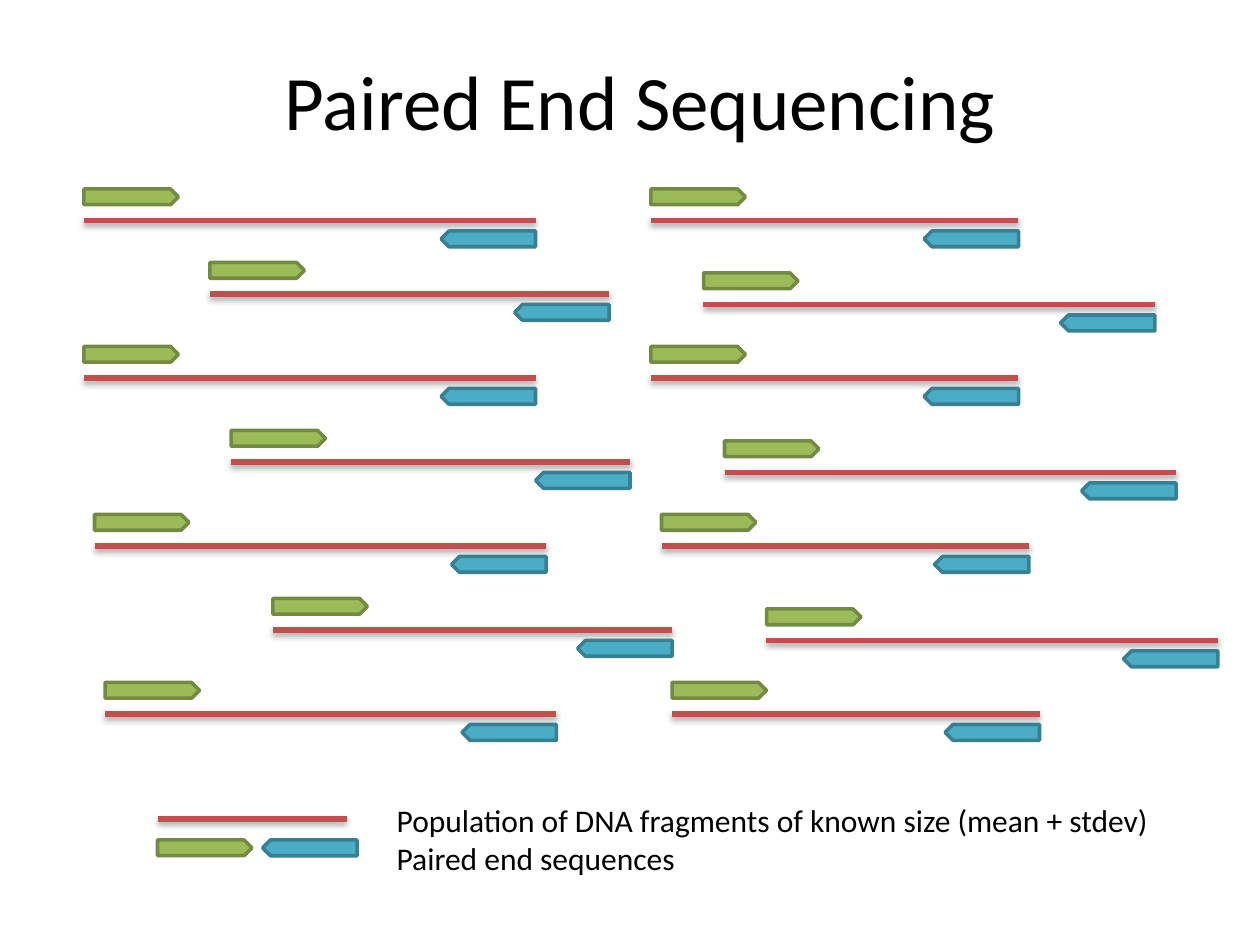
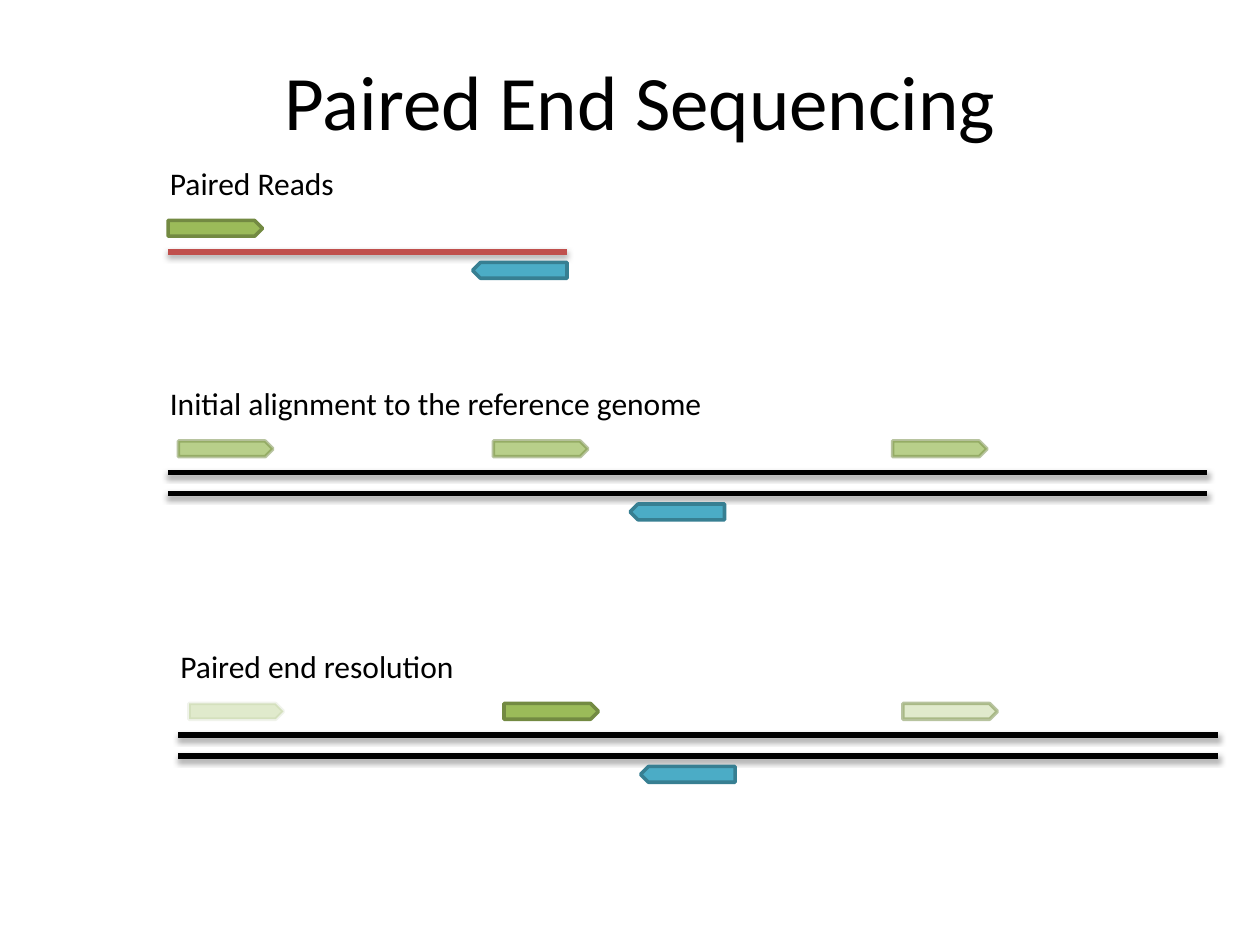
from lxml import etree
from pptx import Presentation
from pptx import util as u
from pptx.dml.color import RGBColor
from pptx.enum import shapes, text
from pptx.oxml import parse_xml
from pptx.oxml.ns import nsdecls, qn

RED, BLACK, WHITE = "C0504D", "000000", "FFFFFF"
FORWARD = {"fill": "9BBB59", "edge": "738A42", "rotation": 0}
REVERSE = {"fill": "4BACC6", "edge": "377F92", "rotation": 180}
SHADOW = (
    f'<a:effectLst {nsdecls("a")}>'
    '<a:outerShdw blurRad="40000" dist="23000" dir="5400000" rotWithShape="0">'
    '<a:srgbClr val="000000"><a:alpha val="35000"/></a:srgbClr>'
    "</a:outerShdw></a:effectLst>"
)
READ_COLUMNS, READ_ROWS = 9, 1.5
SOLID = (100, 100)

deck = Presentation()
deck.slide_width, deck.slide_height = u.Inches(10), u.Inches(7.5)
CELL = deck.slide_width / 120


def grid(*cells):
    return [u.Emu(round(cell * CELL)) for cell in cells]


def paint(fill, colour):
    fill.solid()
    fill.fore_color.rgb = RGBColor.from_string(colour)


title = {
    "lines": ["Paired End Sequencing"],
    "place": (7, 2, 108, 15),
    "size": 44,
    "frame": {"word_wrap": True, "vertical_anchor": text.MSO_ANCHOR.MIDDLE},
    "align": text.PP_ALIGN.CENTER,
}
label = {
    "size": 18,
    "frame": {"word_wrap": False, "auto_size": text.MSO_AUTO_SIZE.SHAPE_TO_FIT_TEXT},
    "align": text.PP_ALIGN.LEFT,
}

population = [
    (8, 21, 43), (62, 21, 35),
    (20, 28, 38), (67, 29, 43),
    (8, 36, 43), (62, 36, 35),
    (22, 44, 38), (69, 45, 43),
    (9, 52, 43), (63, 52, 35),
    (26, 60, 38), (73, 61, 43),
    (10, 68, 43), (64, 68, 35),
]
pages = [
    {
        "fragments": population,
        "strands": [(15, 78, 18, RED)],
        "reads": [(15, 80, FORWARD, SOLID), (25, 80, REVERSE, SOLID)],
        "labels": [
            (36.6, 75.7, 74.9, 8.5, [
                "Population of DNA fragments of known size (mean + stdev)",
                "Paired end sequences",
            ]),
        ],
    },
    {
        "fragments": [(16, 24, 38)],
        "strands": [],
        "reads": [],
        "labels": [
            (15, 15, 18.2, 4.8, ["Paired Reads"]),
            (15, 36, 53.8, 4.8, ["Initial alignment to the reference genome"]),
            (16, 61, 28.8, 4.8, ["Paired end resolution"]),
        ],
    },
]

alignments = [
    (16, 45, [(70, 50), (70, 50), (70, 50)]),
    (17, 70, [(30, 10), SOLID, (30, 50)]),
]
for left, row, opacities in alignments:
    pages[1]["strands"] += [(left, row, 99, BLACK), (left, row + 2, 99, BLACK)]
    for offset, opacity in zip((1, 31, 69), opacities):
        pages[1]["reads"].append((left + offset, row - 3, FORWARD, opacity))
    pages[1]["reads"].append((left + 44, row + 3, REVERSE, SOLID))

for content in pages:
    page = deck.slides.add_slide(deck.slide_layouts[6])
    paint(page.background.fill, WHITE)

    strands, reads = list(content["strands"]), list(content["reads"])
    for left, row, length in content["fragments"]:
        strands.append((left, row, length, RED))
        reads.append((left, row - 3, FORWARD, SOLID))
        reads.append((left + length - READ_COLUMNS, row + 1, REVERSE, SOLID))

    for left, row, length, colour in strands:
        strand = page.shapes.add_connector(
            shapes.MSO_CONNECTOR.STRAIGHT, *grid(left, row, left + length, row))
        paint(strand.line.fill, colour)
        strand.line.width = u.Pt(3)
        strand._element.spPr.append(parse_xml(SHADOW))

    for left, top, style, opacities in reads:
        read = page.shapes.add_shape(
            shapes.MSO_SHAPE.PENTAGON, *grid(left, top, READ_COLUMNS, READ_ROWS))
        read.shadow.inherit = False
        read.rotation = style["rotation"]
        paint(read.fill, style["fill"])
        paint(read.line.fill, style["edge"])
        read.line.width = u.Pt(2)
        tints = list(read._element.spPr.iter(qn("a:srgbClr")))
        for tint, opacity in zip(tints, opacities):
            if opacity < 100:
                etree.SubElement(tint, qn("a:alpha"), val=str(opacity * 1000))

    captions = [title]
    for *place, lines in content["labels"]:
        captions.append({**label, "place": place, "lines": lines})
    for caption in captions:
        box = page.shapes.add_textbox(*grid(*caption["place"]))
        for name, value in caption["frame"].items():
            setattr(box.text_frame, name, value)
        box.text_frame.text = "\n".join(caption["lines"])
        for para in box.text_frame.paragraphs:
            para.alignment = caption["align"]
            for span in para.runs:
                for name, value in {"name": "Calibri", "size": u.Pt(caption["size"])}.items():
                    setattr(span.font, name, value)
                paint(span.font.fill, BLACK)

deck.save("out.pptx")
